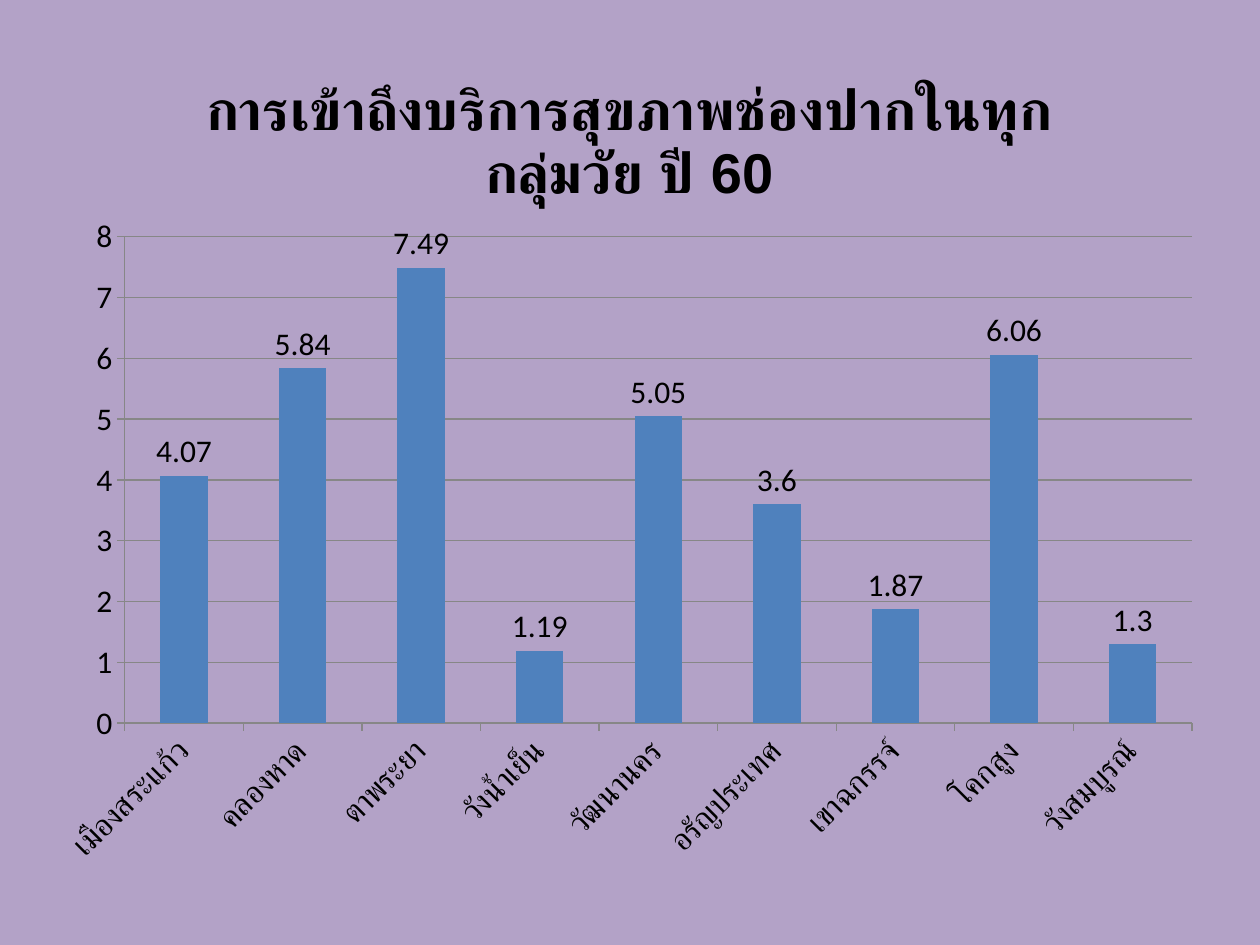
"""Build a slide with a column chart of access to oral health services by district."""
from typing import NamedTuple

from lxml.etree import SubElement
from pptx import Presentation
from pptx.chart.chart import Chart
from pptx.chart.data import CategoryChartData
from pptx.dml.color import RGBColor
from pptx.enum.chart import XL_CHART_TYPE, XL_LABEL_POSITION, XL_TICK_MARK
from pptx.oxml.ns import qn
from pptx.util import Inches, Pt

COLORS = {"background": "B3A2C7", "column": "4F81BD", "text": "000000", "line": "878787"}
TITLE = "การเข้าถึงบริการสุขภาพช่องปากในทุกกลุ่มวัย ปี 60"
BODY_FONT = {"name": "Calibri", "size": Pt(18), "bold": False}
TITLE_FONT = {"name": "Arial", "size": Pt(32), "bold": True}
LABEL_FORMAT = {"show_value": True, "position": XL_LABEL_POSITION.OUTSIDE_END}
CATEGORY_AXIS = {"major_tick_mark": XL_TICK_MARK.OUTSIDE, "has_major_gridlines": False}
VALUE_AXIS = {
    "major_tick_mark": XL_TICK_MARK.OUTSIDE,
    "has_major_gridlines": True,
    "minimum_scale": 0,
    "maximum_scale": 8,
    "major_unit": 1,
}
CHART_LEFT, CHART_TOP, CHART_WIDTH, CHART_HEIGHT = 0.35, 0.36, 9.29, 6.61
PLOT_LEFT, PLOT_TOP, PLOT_WIDTH, PLOT_HEIGHT = 0.99, 1.88, 8.47, 3.86


class District(NamedTuple):
    name: str
    access: float


DISTRICTS = [
    District("เมืองสระแก้ว", 4.07),
    District("คลองหาด", 5.84),
    District("ตาพระยา", 7.49),
    District("วังน้ำเย็น", 1.19),
    District("วัฒนานคร", 5.05),
    District("อรัญประเทศ", 3.6),
    District("เขาฉกรรจ์", 1.87),
    District("โคกสูง", 6.06),
    District("วังสมบูรณ์", 1.3),
]


def apply_format(target: object, values: dict) -> None:
    for attribute, value in values.items():
        setattr(target, attribute, value)


def color(name: str) -> RGBColor:
    return RGBColor.from_string(COLORS[name])


def format_title(chart: Chart) -> None:
    chart.has_title = True
    text_frame = chart.chart_title.text_frame
    text_frame.text = TITLE
    font = text_frame.paragraphs[0].runs[0].font
    apply_format(font, TITLE_FONT)
    font.color.rgb = color("text")
    chart.chart_title.include_in_layout = False


def format_axes(chart: Chart) -> None:
    for axis, values in ((chart.category_axis, CATEGORY_AXIS), (chart.value_axis, VALUE_AXIS)):
        apply_format(axis, values)
        apply_format(axis.tick_labels.font, BODY_FONT)
        axis.format.line.color.rgb = color("line")
    chart.value_axis.major_gridlines.format.line.color.rgb = color("line")
    body_properties = chart.category_axis._element.txPr.bodyPr
    body_properties.set("rot", str(-45 * 60000))


def format_columns(chart: Chart) -> None:
    plot = chart.plots[0]
    apply_format(plot, {"gap_width": 150, "vary_by_categories": False, "has_data_labels": True})
    apply_format(plot.data_labels, LABEL_FORMAT)
    apply_format(plot.data_labels.font, BODY_FONT)
    fill = plot.series[0].format.fill
    fill.solid()
    fill.fore_color.rgb = color("column")


def place_plot(chart: Chart) -> None:
    plot_area = chart._chartSpace.chart.plotArea
    for layout in plot_area.findall(qn("c:layout")):
        plot_area.remove(layout)
    layout = SubElement(plot_area, qn("c:layout"))
    plot_area.insert(0, layout)
    manual = SubElement(layout, qn("c:manualLayout"))
    settings = {
        "layoutTarget": "inner",
        "xMode": "edge",
        "yMode": "edge",
        "x": (PLOT_LEFT - CHART_LEFT) / CHART_WIDTH,
        "y": (PLOT_TOP - CHART_TOP) / CHART_HEIGHT,
        "w": PLOT_WIDTH / CHART_WIDTH,
        "h": PLOT_HEIGHT / CHART_HEIGHT,
    }
    for tag, value in settings.items():
        SubElement(manual, qn(f"c:{tag}")).set("val", str(value))


def main() -> None:
    presentation = Presentation()
    apply_format(presentation, {"slide_width": Inches(10), "slide_height": Inches(7.5)})
    slide = presentation.slides.add_slide(presentation.slide_layouts[6])
    slide.background.fill.solid()
    slide.background.fill.fore_color.rgb = color("background")

    chart_data = CategoryChartData()
    chart_data.categories = [district.name for district in DISTRICTS]
    chart_data.add_series("Series 1", [district.access for district in DISTRICTS])
    bounds = map(Inches, (CHART_LEFT, CHART_TOP, CHART_WIDTH, CHART_HEIGHT))
    chart = slide.shapes.add_chart(XL_CHART_TYPE.COLUMN_CLUSTERED, *bounds, chart_data).chart
    chart.has_legend = False
    apply_format(chart.font, BODY_FONT)
    chart.font.color.rgb = color("text")
    format_title(chart)
    format_axes(chart)
    format_columns(chart)
    place_plot(chart)
    presentation.save("out.pptx")


if __name__ == "__main__":
    main()
